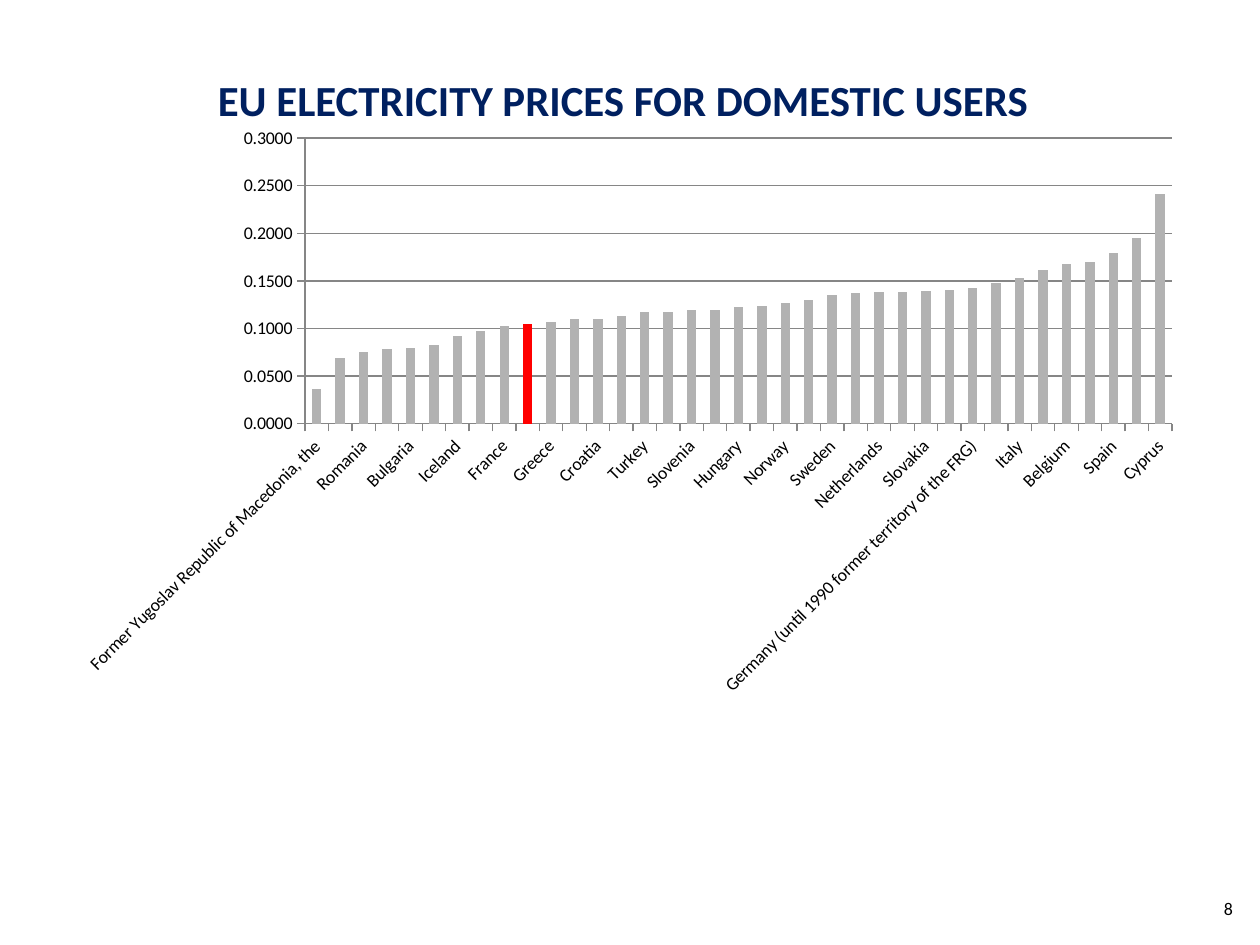
from lxml import etree
from pptx import Presentation
from pptx.chart.data import CategoryChartData
from pptx.dml.color import RGBColor
from pptx.enum import chart as ce, text
from pptx.oxml import parse_xml
from pptx.oxml.ns import nsdecls
from pptx.util import Pt

NAVY = RGBColor(0x00, 0x20, 0x60)
BLACK = RGBColor(0, 0, 0)
GREY = RGBColor(0xB2, 0xB2, 0xB2)
LINE = RGBColor(0x86, 0x86, 0x86)
RED = RGBColor(0xFF, 0, 0)

PRICES = [
    ("Former Yugoslav Republic of Macedonia, the", 0.037),
    ("Bosnia and Herzegovina", 0.069), ("Romania", 0.075),
    ("Estonia", 0.079), ("Bulgaria", 0.08), ("Montenegro", 0.083),
    ("Iceland", 0.092), ("Albania", 0.097), ("France", 0.103),
    ("Lithuania", 0.105), ("Greece", 0.107), ("Finland", 0.11),
    ("Croatia", 0.11), ("Latvia", 0.113), ("Turkey", 0.117),
    ("Portugal", 0.117), ("Slovenia", 0.119), ("Poland", 0.12),
    ("Hungary", 0.123), ("Czech Republic", 0.124), ("Norway", 0.127),
    ("Denmark", 0.13), ("Sweden", 0.135),
    ("Euro area (EA11-2000, EA12-2006, EA13-2007, EA15-2008, "
     "EA16-2010, EA17)", 0.137),
    ("Netherlands", 0.138), ("European Union (27 countries)", 0.138),
    ("Slovakia", 0.14), ("Austria", 0.141),
    ("Germany (until 1990 former territory of the FRG)", 0.143),
    ("Luxembourg", 0.148), ("Italy", 0.153), ("Malta", 0.162),
    ("Belgium", 0.168), ("United Kingdom", 0.17), ("Spain", 0.179),
    ("Ireland", 0.195), ("Cyprus", 0.241),
]
MARKED = "Lithuania"


def style(obj, props):
    for key, val in props.items():
        setattr(obj, key, val)


def write(shape, words, align, size, color, bold):
    frame = shape.text_frame
    style(frame, dict(margin_left=0, margin_right=0, margin_top=0,
                      margin_bottom=0, vertical_anchor=text.MSO_ANCHOR.TOP))
    para = frame.paragraphs[0]
    para.alignment = align
    run = para.add_run()
    run.text = words
    style(run.font, dict(name="Calibri", size=Pt(size), bold=bold))
    run.font.color.rgb = color


deck = Presentation()
style(deck, dict(slide_width=Pt(705.6), slide_height=Pt(529.2)))
slide = deck.slides.add_slide(deck.slide_layouts[5])

# Title
title = slide.shapes.title
style(title, dict(left=Pt(9.4), top=Pt(41), width=Pt(679), height=Pt(29)))
write(title, "EU ELECTRICITY PRICES FOR DOMESTIC USERS",
      text.PP_ALIGN.CENTER, 24, NAVY, True)

# Price chart
data = CategoryChartData(number_format="#,##0.0000")
data.categories = [name for name, price in PRICES]
data.add_series("Series 1", [price for name, price in PRICES])
chart = slide.shapes.add_chart(
    ce.XL_CHART_TYPE.COLUMN_CLUSTERED,
    Pt(36), Pt(65.5), Pt(633), Pt(330.5), data).chart
style(chart, dict(has_legend=False, has_title=False))
style(chart.font, dict(name="Calibri", size=Pt(10)))
chart.font.color.rgb = BLACK

# Columns, one of them marked
plot = chart.plots[0]
style(plot, dict(gap_width=150, vary_by_categories=False))
bars = plot.series[0]
bars.invert_if_negative = False
mark = [name for name, price in PRICES].index(MARKED)
for part, color in ((bars, GREY), (bars.points[mark], RED)):
    part.format.fill.solid()
    part.format.fill.fore_color.rgb = color

# Axes
names, scale = chart.category_axis, chart.value_axis
style(scale, dict(minimum_scale=0, maximum_scale=0.3, major_unit=0.05,
                  has_major_gridlines=True))
style(scale.tick_labels, dict(number_format="#,##0.0000",
                              number_format_is_linked=False))
for axis in (names, scale):
    axis.major_tick_mark = ce.XL_TICK_MARK.OUTSIDE
for item in (names, scale, scale.major_gridlines):
    item.format.line.color.rgb = LINE
    item.format.line.width = Pt(0.75)
names.tick_labels.font.size = Pt(10)
names.tick_labels.font.name = "Calibri"
names.tick_labels.font.color.rgb = BLACK
body = names._element.txPr.bodyPr
style_atts = dict(rot="-2700000", vert="horz")
for key, val in style_atts.items():
    body.set(key, val)

# Fixed plot frame, as shares of the chart
area = chart._chartSpace.chart.plotArea
for old in area.xpath("c:layout"):
    area.remove(old)
frame = dict(layoutTarget="inner", xMode="edge", yMode="edge",
             x=0.213, y=0.036, w=0.767, h=0.484)
marks = "".join(f'<c:{key} val="{val}"/>' for key, val in frame.items())
area.insert(0, parse_xml(
    f'<c:layout {nsdecls("c")}><c:manualLayout>{marks}'
    '</c:manualLayout></c:layout>'))

# Page number
page = slide.shapes.add_textbox(Pt(680.4), Pt(502.5), Pt(15), Pt(12.2))
page.text_frame.word_wrap = False
write(page, "8", text.PP_ALIGN.CENTER, 10, BLACK, False)

deck.save("out.pptx")
